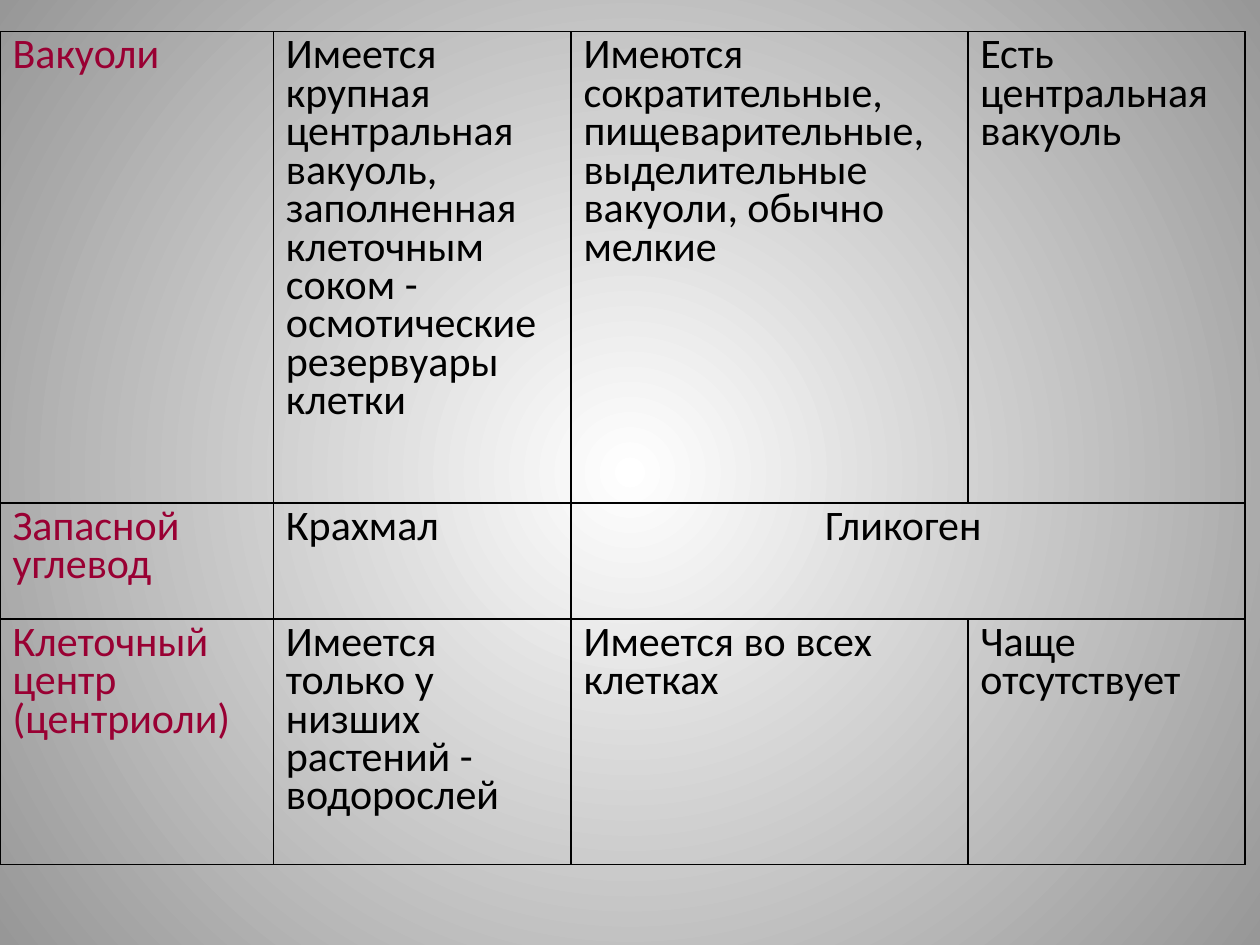
import lxml.etree
import pptx
import pptx.dml.color
import pptx.enum.text
import pptx.oxml.ns
import pptx.util

Cm = pptx.util.Cm
Pt = pptx.util.Pt
RGBColor = pptx.dml.color.RGBColor
Align = pptx.enum.text.PP_ALIGN
qn = pptx.oxml.ns.qn

BLACK = RGBColor(0x00, 0x00, 0x00)
CRIMSON = RGBColor(0x99, 0x00, 0x33)
WHITE = RGBColor(0xFF, 0xFF, 0xFF)
GREY = RGBColor(0x97, 0x97, 0x97)

COLUMN_WIDTHS = [5.51, 6, 8, 5.59]
ROW_HEIGHTS = [9.5, 2.34, 4.95]
ROWS = [
    [
        "Вакуоли",
        "Имеется крупная центральная вакуоль, заполненная клеточным соком - "
        "осмотические резервуары клетки",
        "Имеются сократительные, пищеварительные, выделительные вакуоли, "
        "обычно мелкие",
        "Есть центральная вакуоль",
    ],
    ["Запасной углевод", "Крахмал", "Гликоген "],
    [
        "Клеточный центр (центриоли)",
        "Имеется только у низших растений - водорослей",
        "Имеется во всех клетках",
        "Чаще отсутствует",
    ],
]


class SlideBuilder:
    font_format = {"name": "Calibri", "size": Pt(24)}
    border_width = Pt(1)

    def __init__(self, deck):
        self.page = deck.slides.add_slide(deck.slide_layouts[6])

    def background(self, inner, outer):
        fill = self.page.background.fill
        fill.gradient()
        for stop, color in zip(fill.gradient_stops, (inner, outer)):
            stop.color.rgb = color
        gradient = self.page.element.find(".//" + qn("a:gradFill"))
        gradient.remove(gradient.find(qn("a:lin")))
        circle = lxml.etree.SubElement(gradient, qn("a:path"), {"path": "circle"})
        center = dict.fromkeys("ltrb", "50000")
        lxml.etree.SubElement(circle, qn("a:fillToRect"), center)

    def borders(self, cell, color):
        properties = cell._tc.get_or_add_tcPr()
        for side in "LRTB":
            line = lxml.etree.SubElement(
                properties, qn("a:ln" + side), {"w": str(self.border_width)}
            )
            fill = lxml.etree.SubElement(line, qn("a:solidFill"))
            lxml.etree.SubElement(fill, qn("a:srgbClr"), {"val": str(color)})

    def cell_text(self, cell, text, color, alignment):
        para = cell.text_frame.paragraphs[0]
        para_format = {"line_spacing": 0.75, "alignment": alignment}
        for name, value in para_format.items():
            setattr(para, name, value)
        span = para.add_run()
        span.text = text
        for name, value in self.font_format.items():
            setattr(span.font, name, value)
        span.font.color.rgb = color

    def table(self, left, top, widths, heights, rows):
        table = self.page.shapes.add_table(
            len(heights), len(widths),
            Cm(left), Cm(top), Cm(sum(widths)), Cm(sum(heights)),
        ).table
        table.first_row = table.horz_banding = False
        for column, width in zip(table.columns, widths):
            column.width = Cm(width)
        for row, height in zip(table.rows, heights):
            row.height = Cm(height)
        for cell in table.iter_cells():
            self.borders(cell, BLACK)
            cell.fill.background()
        for row_index, texts in enumerate(rows):
            last = len(texts) - 1
            merged = len(texts) < len(widths)
            if merged:
                table.cell(row_index, last).merge(
                    table.cell(row_index, len(widths) - 1)
                )
            for index, text in enumerate(texts):
                color = BLACK if index else CRIMSON
                centered = merged and index == last
                alignment = Align.CENTER if centered else Align.LEFT
                self.cell_text(table.cell(row_index, index), text, color, alignment)


def main():
    deck = pptx.Presentation()
    deck.slide_width = Cm(25.4)
    deck.slide_height = Cm(19.05)
    builder = SlideBuilder(deck)
    builder.background(WHITE, GREY)
    builder.table(0, 0.64, COLUMN_WIDTHS, ROW_HEIGHTS, ROWS)
    deck.save("out.pptx")


if __name__ == "__main__":
    main()
